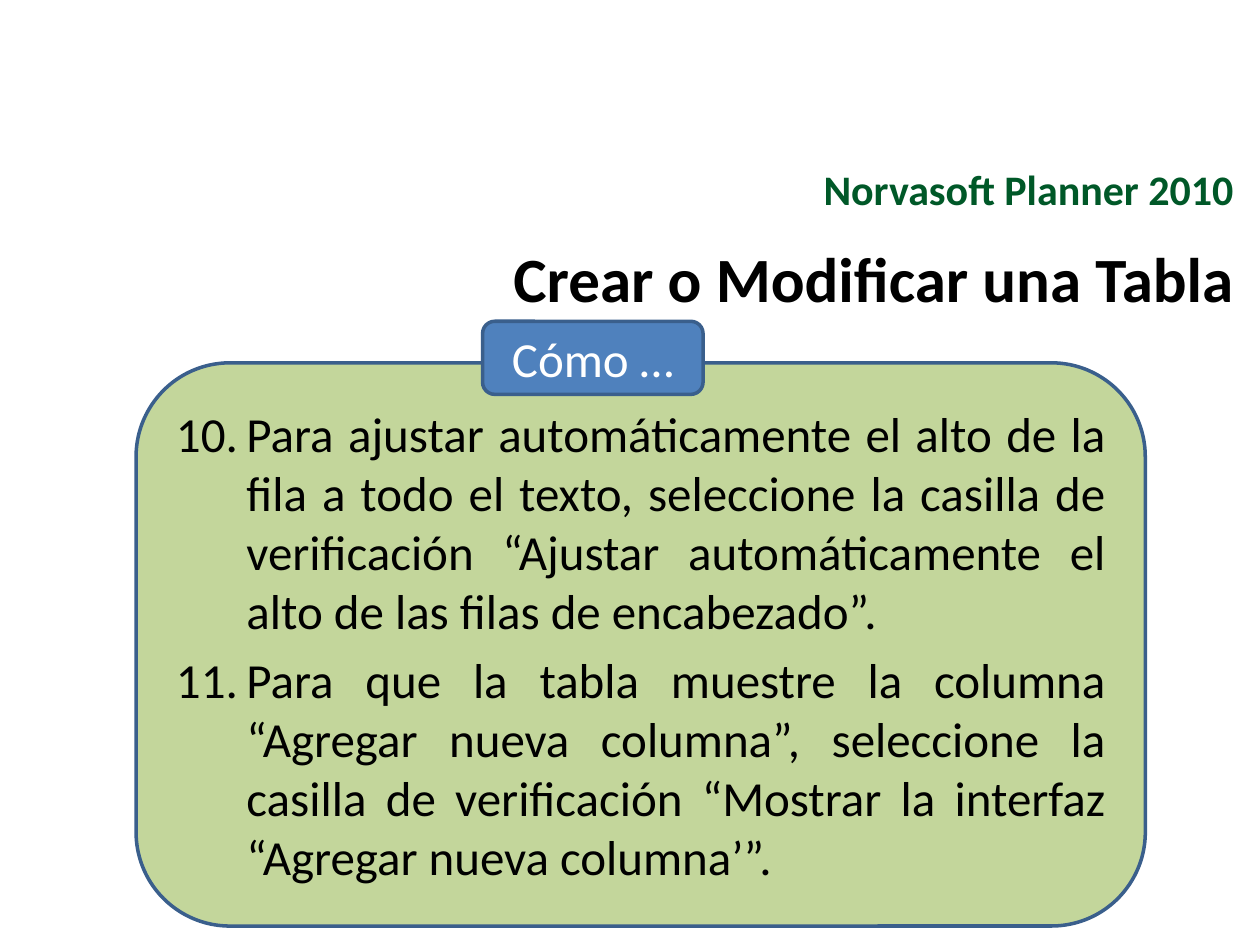
from dataclasses import dataclass

from lxml import etree
from pptx import Presentation
from pptx.dml.color import RGBColor
from pptx.enum.shapes import MSO_SHAPE
from pptx.enum.text import MSO_ANCHOR, PP_ALIGN
from pptx.oxml.ns import qn
from pptx.shapes.base import BaseShape
from pptx.slide import Slide
from pptx.util import Inches, Pt

ROUNDED = MSO_SHAPE.ROUNDED_RECTANGLE
TOP, MIDDLE = MSO_ANCHOR.TOP, MSO_ANCHOR.MIDDLE
LEFT_RIGHT = PP_ALIGN.JUSTIFY
CENTER, RIGHT = PP_ALIGN.CENTER, PP_ALIGN.RIGHT


@dataclass(frozen=True)
class Theme:
    font: str = "Calibri"
    course: str = "005828"
    ink: str = "000000"
    white: str = "FFFFFF"
    panel: str = "C3D69B"
    tag: str = "4F81BD"
    outline: str = "3A5F8C"
    outline_width: float = 2
    course_size: float = 24
    title_size: float = 36
    body_size: float = 28


@dataclass(frozen=True)
class Box:
    left: float
    top: float
    width: float
    height: float


@dataclass(frozen=True)
class TextStyle:
    size: float
    color: str
    align: PP_ALIGN
    anchor: MSO_ANCHOR = MIDDLE
    bold: bool = False
    space_after: float = 0
    first_number: int = 0


@dataclass(frozen=True)
class Heading:
    box: Box
    text: str
    style: TextStyle


@dataclass(frozen=True)
class Panel:
    box: Box
    text: str
    style: TextStyle
    fill: str


THEME = Theme()
NUMBER_INDENT = Inches(0.56)

HEADINGS = [
    Heading(Box(5.39, 1.15, 4.5, 0.69), "Norvasoft Planner 2010",
            TextStyle(THEME.course_size, THEME.course, RIGHT, bold=True)),
    Heading(Box(3.63, 1.85, 6.26, 0.71), "Crear o Modificar una Tabla",
            TextStyle(THEME.title_size, THEME.ink, RIGHT, TOP, bold=True)),
]

STEPS = "\n".join([
    "Para ajustar automáticamente el alto de la fila a todo el texto, "
    "seleccione la casilla de verificación “Ajustar automáticamente el alto "
    "de las filas de encabezado”.",
    "Para que la tabla muestre la columna “Agregar nueva columna”, seleccione "
    "la casilla de verificación “Mostrar la interfaz “Agregar nueva columna’”.",
])

PANELS = [
    Panel(Box(1.08, 2.88, 8.01, 4.47), STEPS,
          TextStyle(THEME.body_size, THEME.ink, LEFT_RIGHT, space_after=6,
                    first_number=10), THEME.panel),
    Panel(Box(3.83, 2.55, 1.75, 0.58), "Cómo …",
          TextStyle(THEME.body_size, THEME.white, CENTER), THEME.tag),
]


def place(box: Box) -> tuple[int, int, int, int]:
    return (Inches(box.left), Inches(box.top),
            Inches(box.width), Inches(box.height))


def write(holder: BaseShape, text: str, style: TextStyle) -> None:
    frame = holder.text_frame
    frame.word_wrap = True
    frame.vertical_anchor = style.anchor
    frame.text = text
    for paragraph in frame.paragraphs:
        paragraph.alignment = style.align
        paragraph.space_after = Pt(style.space_after)
        if style.first_number:
            properties = paragraph._p.get_or_add_pPr()
            properties.set("marL", str(NUMBER_INDENT))
            properties.set("indent", str(-NUMBER_INDENT))
            etree.SubElement(properties, qn("a:buFont"), typeface="+mj-lt")
            etree.SubElement(properties, qn("a:buAutoNum"), type="arabicPeriod",
                             startAt=str(style.first_number))
        for run in paragraph.runs:
            run.font.name = THEME.font
            run.font.size = Pt(style.size)
            run.font.bold = style.bold
            run.font.color.rgb = RGBColor.from_string(style.color)


def draw_heading(slide: Slide, heading: Heading) -> None:
    holder = slide.shapes.add_textbox(*place(heading.box))
    write(holder, heading.text, heading.style)


def draw_panel(slide: Slide, panel: Panel) -> None:
    holder = slide.shapes.add_shape(ROUNDED, *place(panel.box))
    holder.shadow.inherit = False
    holder.fill.solid()
    holder.fill.fore_color.rgb = RGBColor.from_string(panel.fill)
    holder.line.color.rgb = RGBColor.from_string(THEME.outline)
    holder.line.width = Pt(THEME.outline_width)
    write(holder, panel.text, panel.style)


def main() -> None:
    deck = Presentation()
    deck.slide_width, deck.slide_height = Inches(10), Inches(7.5)
    slide = deck.slides.add_slide(deck.slide_layouts[6])
    for heading in HEADINGS:
        draw_heading(slide, heading)
    for panel in PANELS:
        draw_panel(slide, panel)
    deck.save("out.pptx")


if __name__ == "__main__":
    main()
